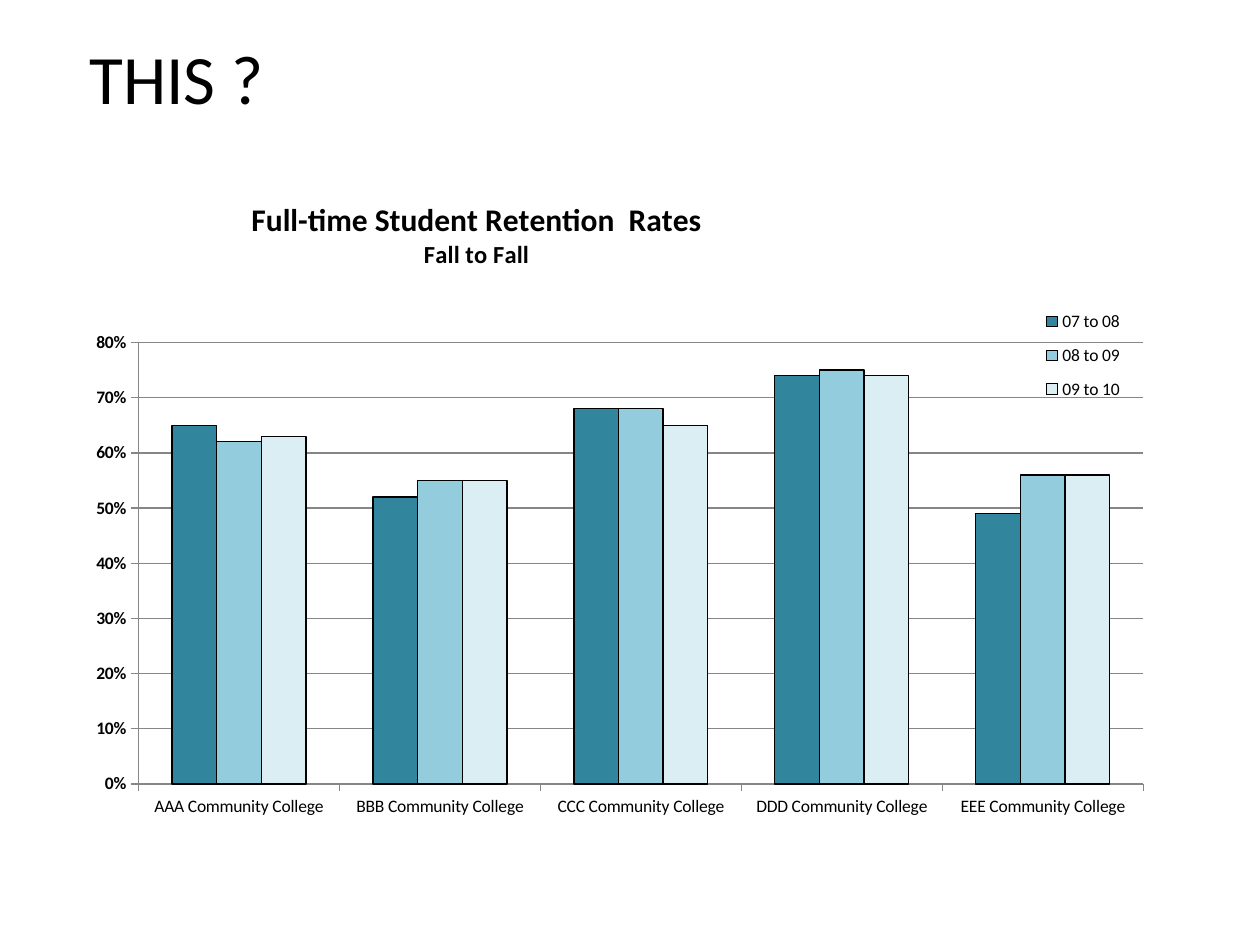
from pptx import Presentation
from pptx.chart.data import CategoryChartData
from pptx.dml.color import RGBColor
from pptx.enum.chart import XL_CHART_TYPE, XL_LEGEND_POSITION, XL_TICK_MARK
from pptx.enum.text import MSO_ANCHOR, PP_ALIGN
from pptx.oxml import parse_xml
from pptx.oxml.ns import nsdecls, qn
from pptx.util import Cm, Pt

FONT = "Calibri"
BLACK, GREY = "000000", "868686"
COLLEGES = [f"{letter * 3} Community College" for letter in "ABCDE"]
RETENTION = [
    ("07 to 08", "31859C", (0.65, 0.52, 0.68, 0.74, 0.49)),
    ("08 to 09", "93CDDD", (0.62, 0.55, 0.68, 0.75, 0.56)),
    ("09 to 10", "DBEEF4", (0.63, 0.55, 0.65, 0.74, 0.56)),
]
CHART_TITLE = [("Full-time Student Retention  Rates", 18), ("Fall to Fall", 14)]


def rgb(value):
    return RGBColor.from_string(value)


def set_attrs(obj, **values):
    for name, value in values.items():
        setattr(obj, name, value)


def format_font(font, size, bold=False):
    set_attrs(font, name=FONT, size=Pt(size), bold=bold)
    font.color.rgb = rgb(BLACK)


def format_line(line, color):
    line.color.rgb = rgb(color)
    line.width = Pt(0.75)


def set_layout(element, index, inner=False, **fractions):
    """Place a chart part by fractions of the chart's width and height."""
    for old in element.findall(qn("c:layout")):
        element.remove(old)
    target = '<c:layoutTarget val="inner"/>' if inner else ""
    modes = "".join(f'<c:{k}Mode val="edge"/>' for k in "xy")
    values = "".join(f'<c:{k} val="{v}"/>' for k, v in fractions.items())
    element.insert(index, parse_xml(
        f'<c:layout {nsdecls("c")}><c:manualLayout>{target}{modes}{values}'
        "</c:manualLayout></c:layout>"))


def add_title(slide, text):
    sp = slide.shapes.title
    set_attrs(sp, left=Cm(0), top=Cm(0.64), width=Cm(22.02), height=Cm(1.83))
    tf = sp.text_frame
    set_attrs(tf, margin_left=Cm(1.8), vertical_anchor=MSO_ANCHOR.MIDDLE)
    p = tf.paragraphs[0]
    p.alignment = PP_ALIGN.LEFT
    r = p.add_run()
    r.text = text
    format_font(r.font, 39.6)


def format_chart_title(chart):
    tf = chart.chart_title.text_frame
    for i, (text, size) in enumerate(CHART_TITLE):
        p = tf.add_paragraph() if i else tf.paragraphs[0]
        r = p.add_run()
        r.text = text
        format_font(r.font, size, bold=True)
    chart.chart_title.include_in_layout = False
    set_layout(chart.chart_title._element, 1, x=0.16, y=0.01)


def format_axes(chart):
    for axis, bold in ((chart.category_axis, False), (chart.value_axis, True)):
        axis.major_tick_mark = XL_TICK_MARK.OUTSIDE
        format_font(axis.tick_labels.font, 10, bold)
        format_line(axis.format.line, GREY)
    axis = chart.value_axis
    set_attrs(axis, minimum_scale=0, maximum_scale=0.8, major_unit=0.1)
    set_attrs(axis.tick_labels, number_format="0%", number_format_is_linked=False)
    format_line(axis.major_gridlines.format.line, GREY)


def format_legend(chart):
    chart.has_legend = True
    legend = chart.legend
    set_attrs(legend, position=XL_LEGEND_POSITION.CORNER, include_in_layout=True)
    format_font(legend.font, 10)
    set_layout(legend._element, 1, x=0.88, y=0.17, w=0.09, h=0.18)


def add_retention_chart(slide):
    data = CategoryChartData(number_format="0%")
    data.categories = COLLEGES
    for name, _, values in RETENTION:
        data.add_series(name, values)
    chart = slide.shapes.add_chart(
        XL_CHART_TYPE.COLUMN_CLUSTERED,
        Cm(1.47), Cm(3.81), Cm(22.02), Cm(12.9), data).chart
    format_font(chart.font, 10)
    plot = chart.plots[0]
    set_attrs(plot, gap_width=150, overlap=0, vary_by_categories=False)
    for series, (_, color, _) in zip(plot.series, RETENTION):
        series.format.fill.solid()
        series.format.fill.fore_color.rgb = rgb(color)
        format_line(series.format.line, BLACK)
    format_chart_title(chart)
    format_axes(chart)
    format_legend(chart)
    plot_area = chart.element.find(".//" + qn("c:plotArea"))
    set_layout(plot_area, 0, inner=True, x=0.06, y=0.24, w=0.92, h=0.69)


def main():
    prs = Presentation()
    set_attrs(prs, slide_width=Cm(25.4), slide_height=Cm(19.05))
    slide = prs.slides.add_slide(prs.slide_layouts[5])
    add_title(slide, "THIS ?")
    add_retention_chart(slide)
    prs.save("out.pptx")


if __name__ == "__main__":
    main()
